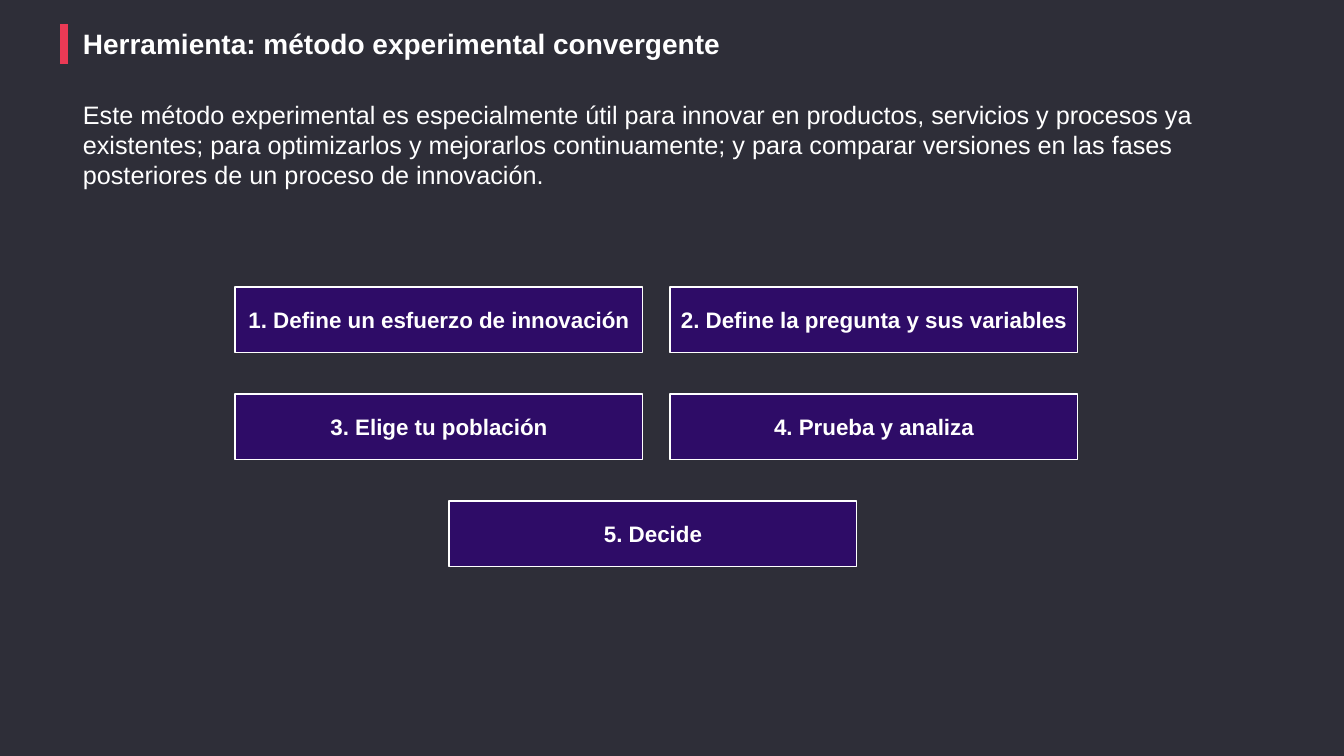
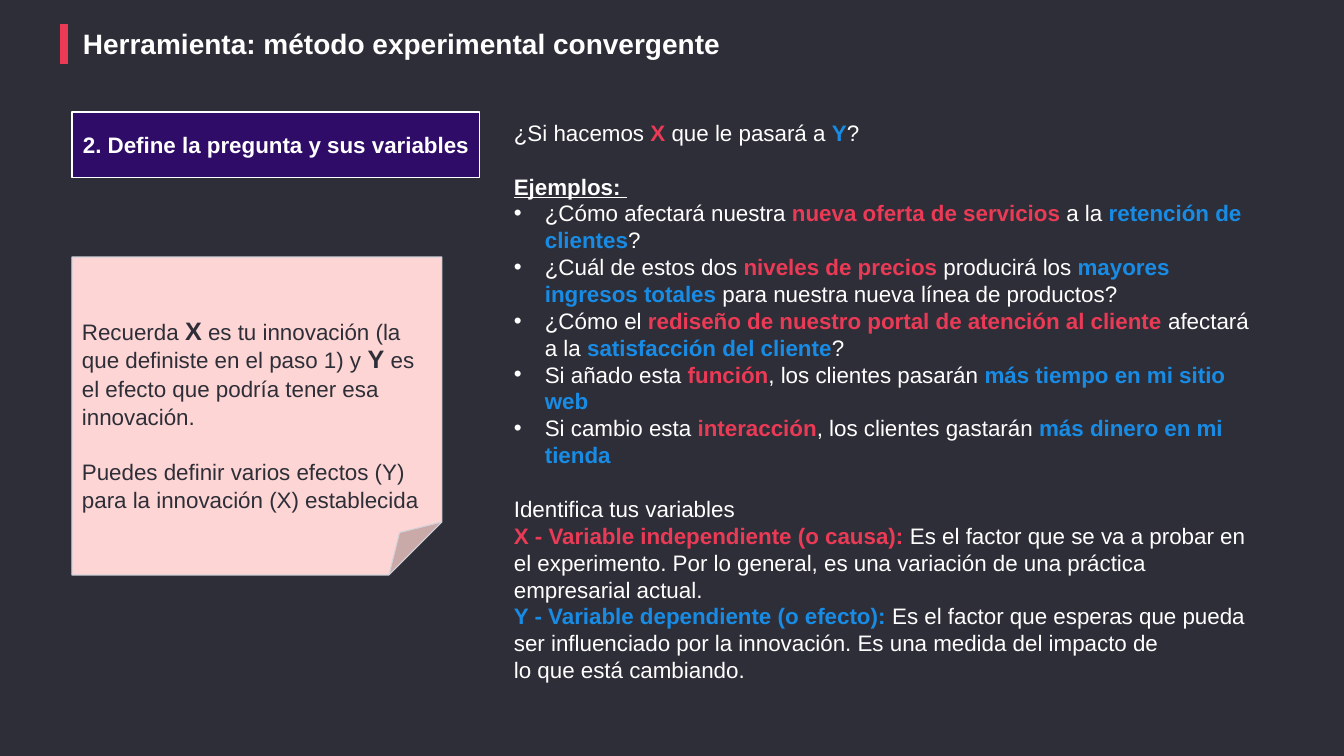
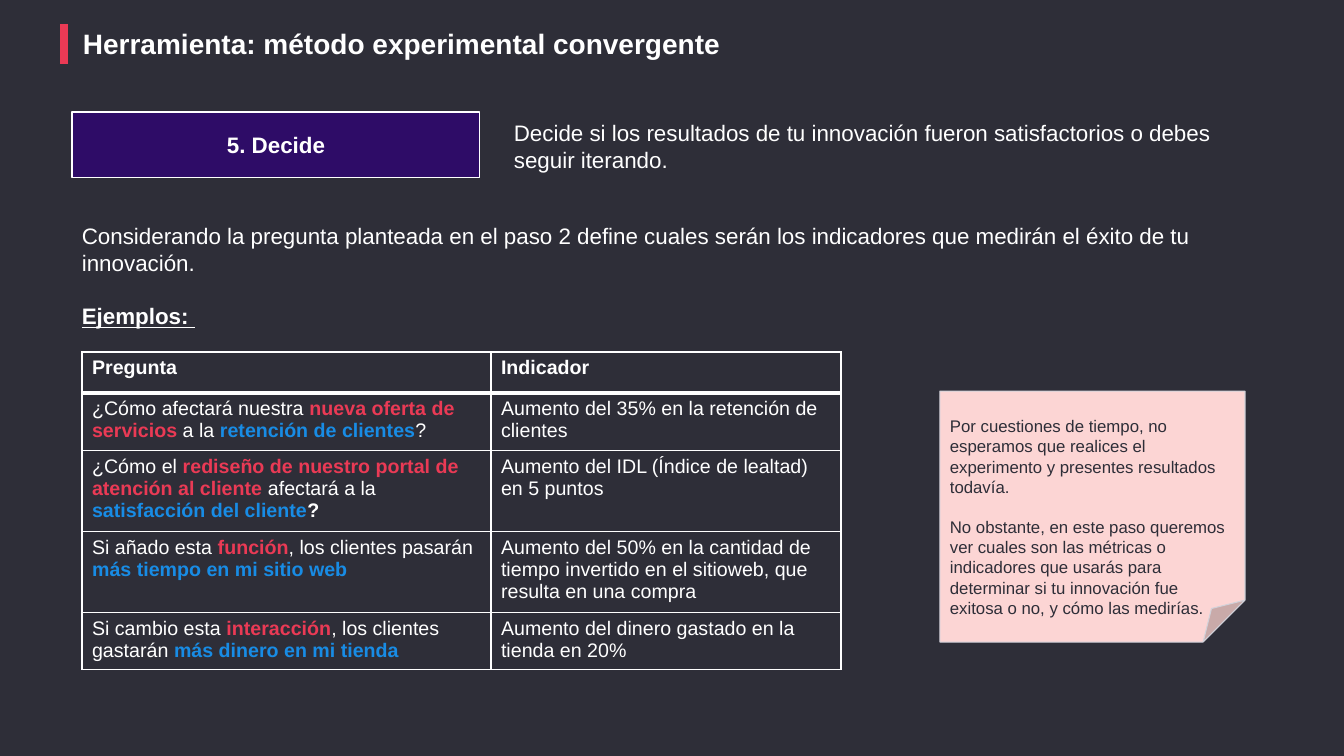
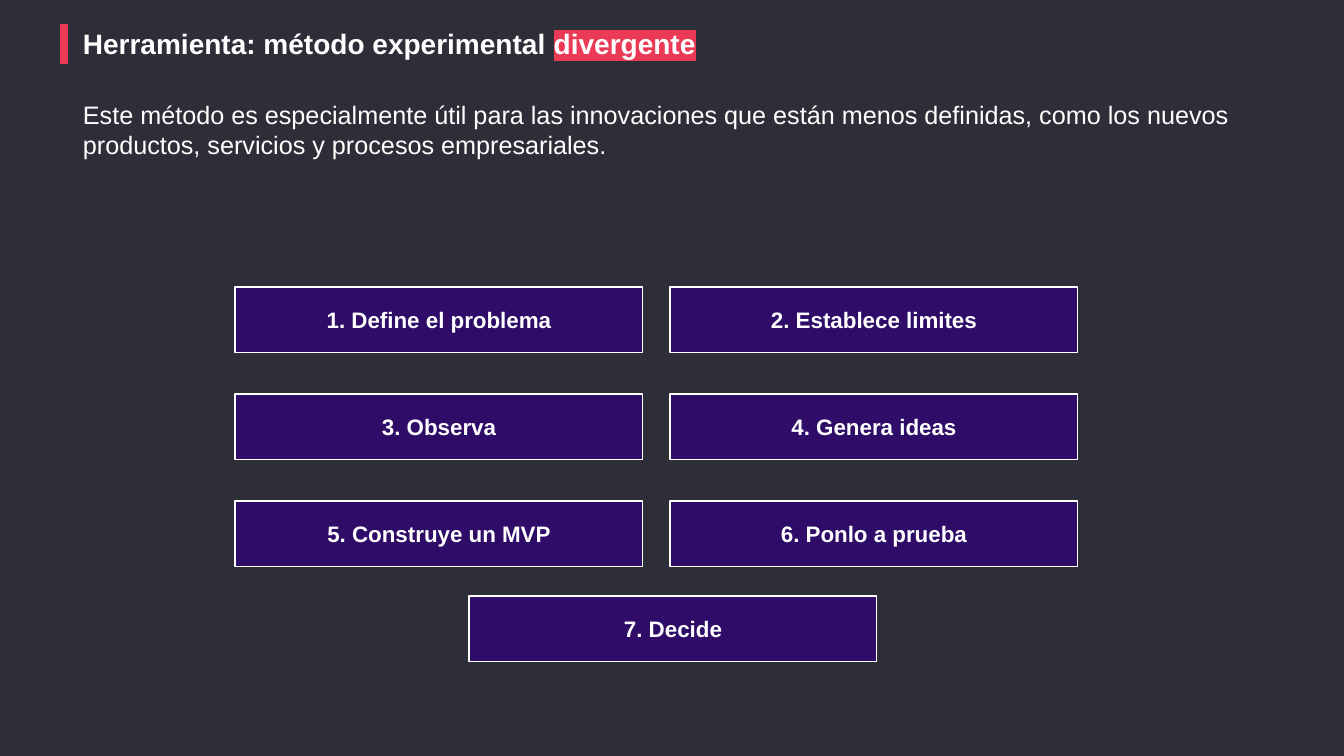
from lxml.etree import SubElement
from pptx import Presentation
from pptx.dml.color import RGBColor
from pptx.enum.shapes import MSO_CONNECTOR, MSO_SHAPE
from pptx.enum.text import MSO_ANCHOR, PP_ALIGN
from pptx.oxml import parse_xml
from pptx.oxml.ns import nsdecls, qn
from pptx.util import Pt

SCALE = 914400 / 100.8
FONT = "Arial"
COLORS = {
    "dark": "2E2E38",
    "white": "FFFFFF",
    "red": "EA3A55",
    "blue": "188CE5",
    "purple": "2E0C67",
    "pink": "FCD5D4",
    "grey": "D2D2DA",
}
STYLES = {
    "x": dict(color="red", bold=True),
    "y": dict(color="blue", bold=True),
    "bold": dict(bold=True),
    "heading": dict(bold=True, underline=True),
    "large": dict(bold=True, size=18),
    "marked": dict(highlight="red"),
}
STEP_W, STEP_H = 408, 66
STEP_GAP_X, STEP_GAP_Y = 27, 41

TITLE = "Herramienta: método experimental "
STEP_2 = "2. Define la pregunta y sus variables"
STEP_5 = "5. Decide"
OFFER = ["¿Cómo afectará nuestra ", ("nueva oferta de servicios", "x"), " a la ",
         ("retención de clientes", "y"), "?"]
PRICES = ["¿Cuál de estos dos ", ("niveles de precios", "x"), " producirá los ",
          ("mayores ingresos totales", "y"), " para nuestra nueva línea de productos?"]
PORTAL = ["¿Cómo el ", ("rediseño de nuestro portal de atención al cliente", "x"),
          " afectará a la ", ("satisfacción del cliente", "y")]
FEATURE = ["Si añado esta ", ("función", "x"), ", los clientes pasarán ",
           ("más tiempo en mi sitio web", "y")]
INTERACTION = ["Si cambio esta ", ("interacción", "x"), ", los clientes gastarán ",
               ("más dinero en mi tienda", "y")]
EXAMPLES_HEADING = ("Ejemplos: ", "heading")


def px(n):
    return round(n * SCALE)


def rect(x, y, w, h):
    return px(x), px(y), px(w), px(h)


def rgb(name):
    return RGBColor.from_string(COLORS[name])


def para(*runs, gap=False, bullet=False):
    return dict(runs=runs, gap=gap, bullet=bullet)


def add_run(p, text, size, color="white", bold=False, underline=False, highlight=None):
    r = p.add_run()
    r.text = text
    f = r.font
    f.size, f.name, f.bold, f.underline = Pt(size), FONT, bold, underline
    f.color.rgb = rgb(color)
    if highlight:
        mark = parse_xml(f'<a:highlight {nsdecls("a")}><a:srgbClr val="{COLORS[highlight]}"/></a:highlight>')
        r._r.rPr.find(qn("a:solidFill")).addnext(mark)


def write(tf, *paras, size=16, color="white", bold=False, align=PP_ALIGN.LEFT, leading=1.2):
    tf.word_wrap = True
    for i, item in enumerate(paras):
        item = para(item) if isinstance(item, str) else item
        p = tf.paragraphs[0] if i == 0 else tf.add_paragraph()
        p.alignment = align
        if leading:
            p.line_spacing = Pt(size * leading)
        if item["gap"]:
            p.space_before = Pt(size * 1.2)
        if item["bullet"]:
            pPr = p._p.get_or_add_pPr()
            pPr.set("marL", str(px(31)))
            pPr.set("indent", str(px(-31)))
            SubElement(pPr, qn("a:buFont"), typeface=FONT)
            SubElement(pPr, qn("a:buChar"), char="•")
        for run in item["runs"]:
            text, style = (run, None) if isinstance(run, str) else run
            fmt = dict(size=size, color=color, bold=bold)
            fmt.update(STYLES.get(style, {}))
            add_run(p, text, **fmt)


def text_box(s, box, *paras, **fmt):
    tb = s.shapes.add_textbox(*rect(*box))
    write(tb.text_frame, *paras, **fmt)


def shape(s, kind, box, fill, line):
    sp = s.shapes.add_shape(kind, *rect(*box))
    sp.shadow.inherit = False
    sp.fill.solid()
    sp.fill.fore_color.rgb = rgb(fill)
    sp.line.color.rgb = rgb(line)
    sp.line.width = Pt(0.75)
    return sp


def step(s, x, y, label):
    sp = shape(s, MSO_SHAPE.RECTANGLE, (x, y, STEP_W, STEP_H), "purple", "white")
    sp.text_frame.vertical_anchor = MSO_ANCHOR.MIDDLE
    write(sp.text_frame, label, bold=True, align=PP_ALIGN.CENTER)


def step_grid(s, x, y, labels, last_dx, last_dy):
    for i, label in enumerate(labels[:-1]):
        row, col = divmod(i, 2)
        step(s, x + col * (STEP_W + STEP_GAP_X), y + row * (STEP_H + STEP_GAP_Y), label)
    step(s, x + last_dx, y + last_dy, labels[-1])


def note(s, box, top, *paras, **fmt):
    sp = shape(s, MSO_SHAPE.FOLDED_CORNER, box, "pink", "grey")
    sp.text_frame.vertical_anchor = MSO_ANCHOR.TOP
    sp.text_frame.margin_top = px(top)
    write(sp.text_frame, *paras, color="dark", **fmt)


def border(cell, **widths):
    tcPr = cell._tc.get_or_add_tcPr()
    for i, side in enumerate("LRTB"):
        width = Pt(widths.get(side, 1))
        tcPr.insert(i, parse_xml(
            f'<a:ln{side} {nsdecls("a")} w="{width}"><a:solidFill>'
            f'<a:srgbClr val="{COLORS["white"]}"/></a:solidFill></a:ln{side}>'))


def indicator_table(s, x, y, cols, heights, rows):
    frame = s.shapes.add_table(len(rows), len(cols), *rect(x, y, sum(cols), sum(heights)))
    table = frame.table
    table.first_row = table.horz_banding = False
    for col, w in zip(table.columns, cols):
        col.width = px(w)
    for i, (h, row) in enumerate(zip(heights, rows)):
        table.rows[i].height = px(h)
        for j, item in enumerate(row):
            cell = table.cell(i, j)
            cell.fill.background()
            border(cell, T=3 if i == 1 else 1, B=3 if i == 0 else 1)
            write(cell.text_frame, item, size=14, bold=i == 0, leading=None)


def new_slide(prs, *title):
    s = prs.slides.add_slide(prs.slide_layouts[6])
    bar = s.shapes.add_connector(MSO_CONNECTOR.STRAIGHT, px(64), px(24), px(64), px(64))
    bar.line.color.rgb = rgb("red")
    bar.line.width = Pt(6)
    SubElement(bar._element.spPr, qn("a:effectLst"))
    text_box(s, (73, 22, 784, 44), para(*title), size=20, bold=True)
    return s


def overview_slide(prs, title, intro, labels, last_dx, last_dy):
    s = new_slide(prs, *title)
    text_box(s, (73, 94, 1196, 102), intro, size=18)
    step_grid(s, 235, 287, labels, last_dx, last_dy)


def step_slide(prs, label, *paras, height):
    s = new_slide(prs, TITLE + "convergente")
    step(s, 72, 112, label)
    text_box(s, (504, 114, 768, height), *paras)
    return s


def question_slide(prs):
    examples = [OFFER, PRICES, PORTAL + ["?"], FEATURE, INTERACTION]
    s = step_slide(
        prs, STEP_2,
        para("¿Si hacemos ", ("X", "x"), " que le pasará a ", ("Y", "y"), "?"),
        para(EXAMPLES_HEADING, gap=True),
        *[para(*runs, bullet=True) for runs in examples],
        para("Identifica tus variables", gap=True),
        para(("X - Variable independiente (o causa): ", "x"),
             "Es el factor que se va a probar en el experimento. Por lo general, "
             "es una variación de una práctica empresarial actual."),
        para(("Y - Variable dependiente (o efecto): ", "y"),
             "Es el factor que esperas que pueda ser influenciado por la innovación. "
             "Es una medida del impacto de"),
        "lo que está cambiando.",
        height=581)
    note(s, (72, 257, 370, 318), 61,
         para("Recuerda ", ("X", "large"), " es tu innovación (la que definiste en el paso 1) y ",
              ("Y", "large"), " es el efecto que podría tener esa innovación."),
         para("Puedes definir varios efectos (Y) para la innovación (X) establecida", gap=True),
         leading=1.25)


def decision_slide(prs):
    s = step_slide(
        prs, STEP_5,
        "Decide si los resultados de tu innovación fueron satisfactorios o debes seguir iterando.",
        height=65)
    text_box(s, (72, 217, 1200, 119),
             "Considerando la pregunta planteada en el paso 2 define cuales serán los "
             "indicadores que medirán el éxito de tu innovación.",
             para(EXAMPLES_HEADING, gap=True))
    indicator_table(s, 82, 352, (409, 350), (41, 57, 81, 81, 57), [
        ("Pregunta", "Indicador"),
        (para(*OFFER), "Aumento del 35% en la retención de clientes"),
        (para(*PORTAL, ("?", "bold")), "Aumento del IDL (Índice de lealtad) en 5 puntos"),
        (para(*FEATURE), "Aumento del 50% en la cantidad de tiempo invertido en el sitioweb, "
                         "que resulta en una compra"),
        (para(*INTERACTION), "Aumento del dinero gastado en la tienda en 20%"),
    ])
    note(s, (940, 391, 305, 251), 25,
         "Por cuestiones de tiempo, no esperamos que realices el experimento y presentes "
         "resultados todavía.",
         para("No obstante, en este paso queremos ver cuales son las métricas o indicadores "
              "que usarás para determinar si tu innovación fue exitosa o no, y cómo las medirías.",
              gap=True),
         size=12)


def main():
    prs = Presentation()
    prs.slide_width, prs.slide_height = px(1344), px(756)
    bg = prs.slide_master.background.fill
    bg.solid()
    bg.fore_color.rgb = rgb("dark")
    overview_slide(
        prs, [TITLE + "convergente"],
        "Este método experimental es especialmente útil para innovar en productos, servicios "
        "y procesos ya existentes; para optimizarlos y mejorarlos continuamente; y para comparar "
        "versiones en las fases posteriores de un proceso de innovación.",
        ["1. Define un esfuerzo de innovación", STEP_2, "3. Elige tu población",
         "4. Prueba y analiza", STEP_5],
        214, 214)
    question_slide(prs)
    decision_slide(prs)
    overview_slide(
        prs, [TITLE, ("divergente", "marked")],
        "Este método es especialmente útil para las innovaciones que están menos definidas, "
        "como los nuevos productos, servicios y procesos empresariales.",
        ["1. Define el problema", "2. Establece limites", "3. Observa", "4. Genera ideas",
         "5. Construye un MVP", "6. Ponlo a prueba", "7. Decide"],
        234, 309)
    prs.save("out.pptx")


if __name__ == "__main__":
    main()
